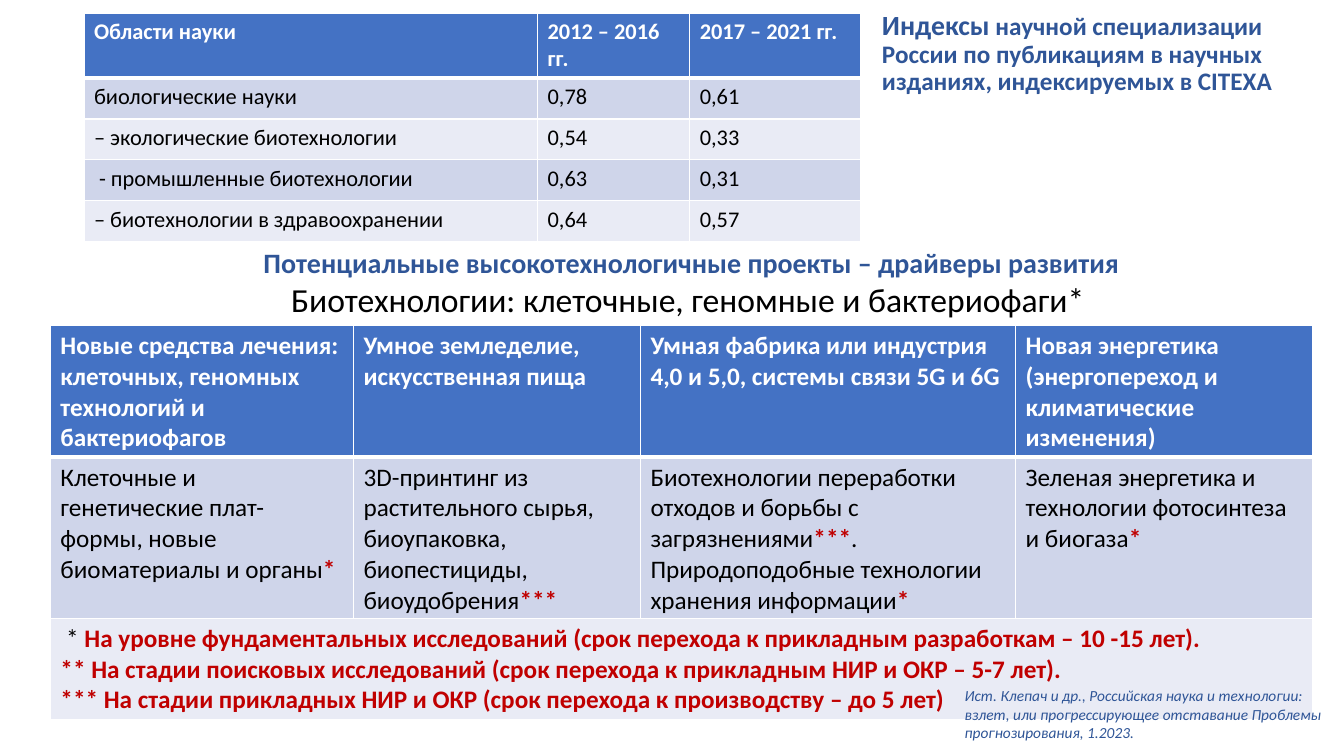
import pptx
import pptx.util
import pptx.dml.color
import pptx.enum.text
import pptx.oxml
import pptx.oxml.ns

Pt = pptx.util.Pt
ALIGN = pptx.enum.text.PP_ALIGN
BLUE, RED, BLACK, WHITE = "2F5597", "C00000", "000000", "FFFFFF"
HEADER, DARK_BAND, LIGHT_BAND = "4472C4", "CFD5EA", "E9EBF5"


def write(paragraph, text, size=18, color=BLACK, bold=False, italic=False):
    run = paragraph.add_run()
    run.text = text
    run.font.name = "Calibri"
    run.font.size = Pt(size)
    run.font.bold = bold
    run.font.italic = italic
    run.font.color.rgb = pptx.dml.color.RGBColor.from_string(color)


def build_table(left, top, widths, heights, rows, size):
    table = slide.shapes.add_table(
        len(rows), len(widths), Pt(left), Pt(top), Pt(sum(widths)), Pt(sum(heights))
    ).table
    for column, width in zip(table.columns, widths):
        column.width = Pt(width)
    for row_index, texts in enumerate(rows):
        table.rows[row_index].height = Pt(heights[row_index])
        if len(texts) < len(widths):
            table.cell(row_index, 0).merge(table.cell(row_index, len(widths) - 1))
        band = HEADER if row_index == 0 else DARK_BAND if row_index % 2 else LIGHT_BAND
        for column_index in range(len(widths)):
            cell = table.cell(row_index, column_index)
            properties = cell._tc.get_or_add_tcPr()
            for side in ("lnL", "lnR", "lnT", "lnB"):
                thick = (row_index, side) in ((0, "lnB"), (1, "lnT"))
                properties.append(pptx.oxml.parse_xml(
                    f'<a:{side} {pptx.oxml.ns.nsdecls("a")} w="{Pt(3 if thick else 1)}">'
                    f'<a:solidFill><a:srgbClr val="{WHITE}"/></a:solidFill></a:{side}>'
                ))
            cell.fill.solid()
            cell.fill.fore_color.rgb = pptx.dml.color.RGBColor.from_string(band)
        for column_index, text in enumerate(texts):
            frame = table.cell(row_index, column_index).text_frame
            for line_index, line in enumerate(text.split("\n")):
                paragraph = frame.add_paragraph() if line_index else frame.paragraphs[0]
                for part_index, part in enumerate(line.split("|")):
                    marked = part_index % 2 == 1
                    color = WHITE if row_index == 0 else RED if marked else BLACK
                    if part:
                        write(paragraph, part, size=size, color=color,
                              bold=marked or row_index == 0)


presentation = pptx.Presentation()
presentation.slide_width = Pt(960)
presentation.slide_height = Pt(540)
slide = presentation.slides.add_slide(presentation.slide_layouts[5])

title = slide.shapes.title
title.left, title.top, title.width, title.height = Pt(622.8), Pt(9.4), Pt(328.3), Pt(58.3)
title.text_frame.word_wrap = True
title.text_frame.auto_size = pptx.enum.text.MSO_AUTO_SIZE.NONE
title.text_frame.vertical_anchor = pptx.enum.text.MSO_ANCHOR.MIDDLE
paragraph = title.text_frame.paragraphs[0]
paragraph.alignment = ALIGN.LEFT
paragraph.line_spacing = 0.9
write(paragraph, "Индексы", size=19.8, color=BLUE, bold=True)
write(paragraph, " научной специализации России по публикациям в научных изданиях, индексируемых в CITEXA",
      color=BLUE, bold=True)

build_table(60, 9.4, [324, 108.7, 121.7], [46] + [29.2] * 4, [
    ["Области науки", "2012 – 2016 гг.", "2017 – 2021 гг."],
    ["биологические науки", "0,78", "0,61"],
    ["– экологические биотехнологии", "0,54", "0,33"],
    [" - промышленные биотехнологии", "0,63", "0,31"],
    ["– биотехнологии в здравоохранении", "0,64", "0,57"],
], 16)

heading = slide.shapes.add_textbox(Pt(60), Pt(172), Pt(868), Pt(60.5)).text_frame
heading.word_wrap = True
write(heading.paragraphs[0], "Потенциальные высокотехнологичные проекты – драйверы развития",
      size=20, color=BLUE, bold=True)
write(heading.add_paragraph(), "Биотехнологии: клеточные, геномные и бактериофаги* ", size=24)
for paragraph in heading.paragraphs:
    paragraph.alignment = ALIGN.CENTER

build_table(36, 232.5, [216.5, 205, 268, 212.5], [94, 115, 71.5], [
    ["Новые средства лечения: клеточных, геномных технологий и бактериофагов",
     "Умное земледелие, искусственная пища",
     "Умная фабрика или индустрия 4,0 и 5,0, системы связи 5G и 6G",
     "Новая энергетика (энергопереход и климатические изменения)"],
    ["Клеточные и генетические плат- формы, новые биоматериалы и органы|*",
     "3D-принтинг из растительного сырья, биоупаковка, биопестициды, биоудобрения|***",
     "Биотехнологии переработки отходов и борьбы с загрязнениями|***|. "
     "Природоподобные технологии хранения информации|*",
     "Зеленая энергетика и технологии фотосинтеза и биогаза|*"],
    [" * |На уровне фундаментальных исследований (срок перехода к прикладным разработкам – 10 -15 лет).\n"
     "|** На стадии поисковых исследований (срок перехода к прикладным НИР и ОКР – 5-7 лет).\n"
     "|*** На стадии прикладных НИР и ОКР (срок перехода к производству – до 5 лет)"],
], 18)

source = slide.shapes.add_textbox(Pt(682), Pt(486.7), Pt(269.3), Pt(47.5)).text_frame
source.word_wrap = True
write(source.paragraphs[0],
      "Ист. Клепач и др., Российская наука и технологии: взлет, или прогрессирующее "
      "отставание Проблемы прогнозирования, 1.2023.",
      size=11, color=BLUE, italic=True)

presentation.save("out.pptx")
